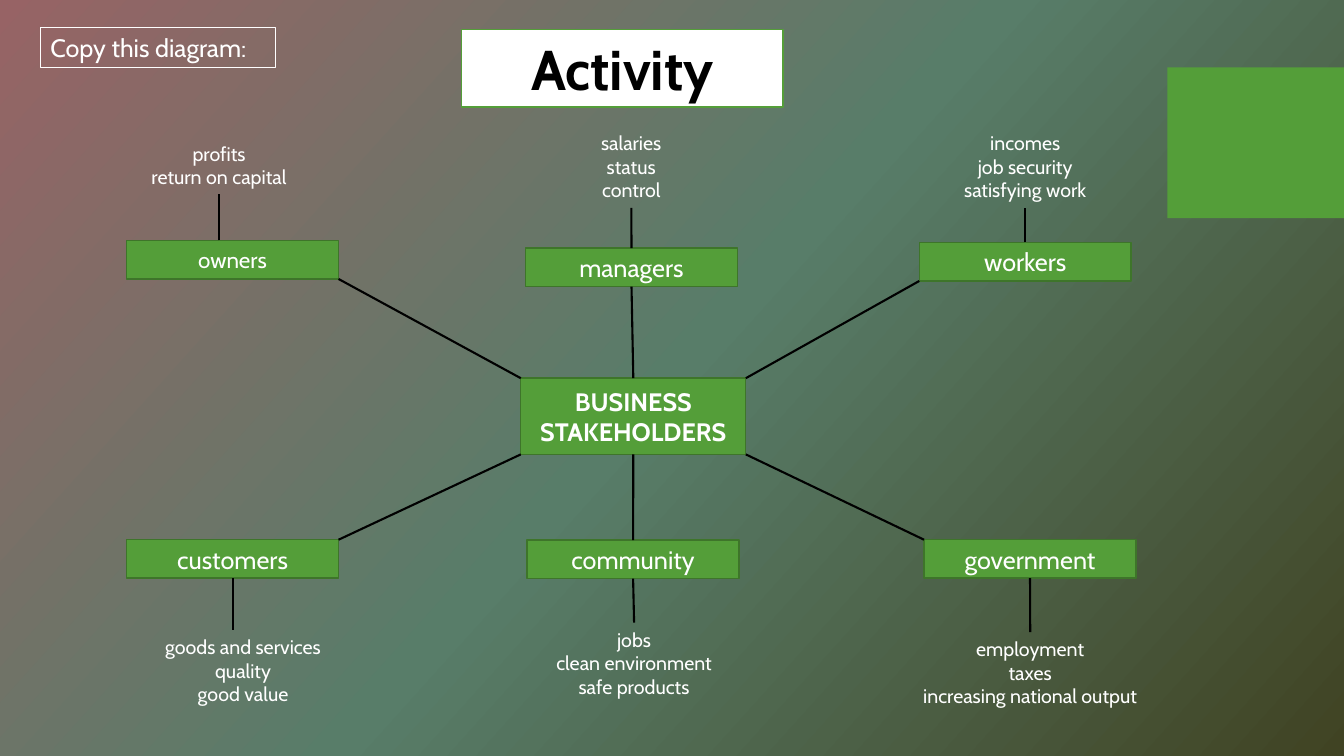
from copy import deepcopy

from pptx import Presentation
from pptx.dml.color import RGBColor
from pptx.enum.shapes import MSO_CONNECTOR, MSO_SHAPE
from pptx.enum.text import MSO_ANCHOR, MSO_AUTO_SIZE, PP_ALIGN
from pptx.oxml.ns import qn
from pptx.oxml.xmlchemy import OxmlElement
from pptx.util import Cm, Pt

FONT = "Cabin"
GREEN, DARK_GREEN, WHITE, BLACK = "549E39", "3E752A", "FFFFFF", "000000"
TOP, BOTTOM = 0, 2
NODE_SIZE = (5.34, 0.97)

STAKEHOLDERS = [
    ("owners", 16, (3.19, 6.06), (3.27, 3.44, 4.5, 1.45),
     ["profits", "return on capital"], "note"),
    ("managers", 18, (13.24, 6.25), (13.72, 3.18, 4.37, 2.06),
     ["salaries", "status", "control"], "both"),
    ("workers", 18, (23.16, 6.11), (23.23, 3.18, 5.2, 2.06),
     ["incomes", "job security", "satisfying work"], "both"),
    ("customers", 18, (3.19, 13.6), (3.28, 15.88, 5.69, 2.06),
     ["goods and services", "quality", "good value"], "node"),
    ("community", 18, (13.28, 13.61), (13.36, 15.69, 5.23, 2.06),
     ["jobs", "clean environment", "safe products"], "both"),
    ("government", 18, (23.28, 13.6), (22.69, 15.93, 6.53, 2.06),
     ["employment", "taxes", "increasing national output"], "both"),
]


def color(hex_string):
    return RGBColor.from_string(hex_string)


def paint_background(slide, stops, angle):
    fill = slide.background.fill
    fill.gradient()
    fill.gradient_angle = 360 - angle
    stop_list = slide.element.find(".//" + qn("a:gsLst"))
    stop_list.insert(1, deepcopy(stop_list[0]))
    for stop, (position, hex_string) in zip(fill.gradient_stops, stops):
        stop.position = position
        stop.color.rgb = color(hex_string)


def write(shape, lines, size, text_color=WHITE, bold=False,
          align=PP_ALIGN.CENTER, anchor=MSO_ANCHOR.TOP, grow=False):
    frame = shape.text_frame
    frame.word_wrap = True
    frame.vertical_anchor = anchor
    frame.auto_size = MSO_AUTO_SIZE.SHAPE_TO_FIT_TEXT if grow else MSO_AUTO_SIZE.NONE
    for index, line in enumerate(lines):
        paragraph = frame.add_paragraph() if index else frame.paragraphs[0]
        paragraph.alignment = align
        run = paragraph.add_run()
        run.text = line
        run.font.name = FONT
        run.font.size = Pt(size)
        run.font.bold = bold
        run.font.color.rgb = color(text_color)


def outline(shape, line_color, width):
    shape.line.color.rgb = color(line_color)
    shape.line.width = Pt(width)


def add_title(slide, text, box):
    title = slide.shapes.title
    title.left, title.top, title.width, title.height = map(Cm, box)
    title.fill.solid()
    title.fill.fore_color.rgb = color(WHITE)
    outline(title, GREEN, 1)
    write(title, [text], 40, BLACK, bold=True)


def add_rectangle(slide, box, fill=None, line=None, width=1):
    shape = slide.shapes.add_shape(MSO_SHAPE.RECTANGLE, *map(Cm, box))
    shape.shadow.inherit = False
    if fill:
        shape.fill.solid()
        shape.fill.fore_color.rgb = color(fill)
    else:
        shape.fill.background()
    if line:
        outline(shape, line, width)
    else:
        shape.line.fill.background()
    return shape


def add_node(slide, text, box, size, bold=False):
    node = add_rectangle(slide, box, GREEN, DARK_GREEN)
    write(node, [text], size, bold=bold, anchor=MSO_ANCHOR.MIDDLE)
    return node


def add_note(slide, lines, box):
    note = slide.shapes.add_textbox(*map(Cm, box))
    write(note, lines, 14, grow=True)
    return note


def add_line(slide, start, end):
    connector = slide.shapes.add_connector(MSO_CONNECTOR.STRAIGHT, *start, *end)
    outline(connector, BLACK, 1.5)
    connector.element.spPr.append(OxmlElement("a:effectLst"))
    return connector


def point(shape, across, side):
    x = shape.left + int(shape.width * across)
    y = shape.top + (shape.height if side == BOTTOM else 0)
    return x, y


def link_to_hub(slide, node, hub, column, node_side, hub_side):
    across = column / 2
    connector = add_line(slide, point(node, 1 - across, node_side),
                         point(hub, across, hub_side))
    if column == 1:
        connector.begin_connect(node, node_side)
        connector.end_connect(hub, hub_side)


def link_to_note(slide, node, note, joined, node_side, note_side):
    start, end = point(node, 0.5, node_side), point(note, 0.5, note_side)
    if joined == "note":
        start = end[0], start[1]
    if joined == "node":
        end = start[0], end[1]
    connector = add_line(slide, start, end)
    if joined != "note":
        connector.begin_connect(node, node_side)
    if joined != "node":
        connector.end_connect(note, note_side)


def main():
    presentation = Presentation()
    presentation.slide_width, presentation.slide_height = Cm(33.86), Cm(19.05)
    slide = presentation.slides.add_slide(presentation.slide_layouts[5])
    paint_background(slide, [(0, "976365"), (0.5, "587D69"), (1, "404323")], 42)

    add_rectangle(slide, (29.41, 1.7, 4.45, 3.8), GREEN)
    add_title(slide, "Activity", (11.63, 0.74, 8.1, 1.96))
    instruction = add_rectangle(slide, (1.02, 0.69, 5.92, 1.02), None, WHITE, 0.75)
    write(instruction, ["Copy this diagram:"], 18, align=PP_ALIGN.LEFT, grow=True)

    hub = add_node(slide, "BUSINESS STAKEHOLDERS", (13.12, 9.53, 5.67, 1.92), 18, True)
    for index, (name, size, corner, note_box, wants, joined) in enumerate(STAKEHOLDERS):
        row, column = divmod(index, 3)
        inner, outer = (BOTTOM, TOP) if row == 0 else (TOP, BOTTOM)
        node = add_node(slide, name, corner + NODE_SIZE, size)
        note = add_note(slide, wants, note_box)
        link_to_hub(slide, node, hub, column, inner, outer)
        link_to_note(slide, node, note, joined, outer, inner)

    presentation.save("out.pptx")


if __name__ == "__main__":
    main()
